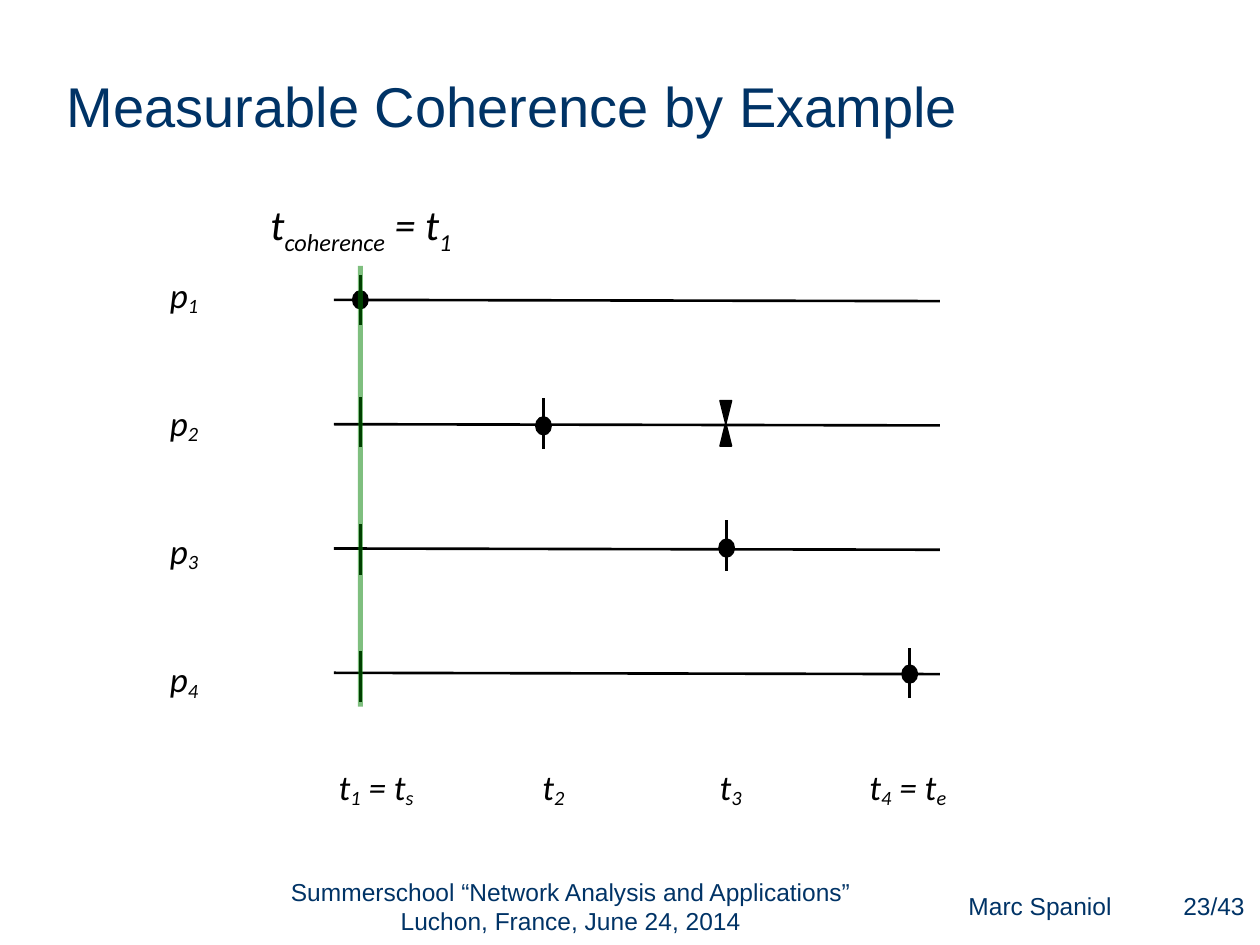
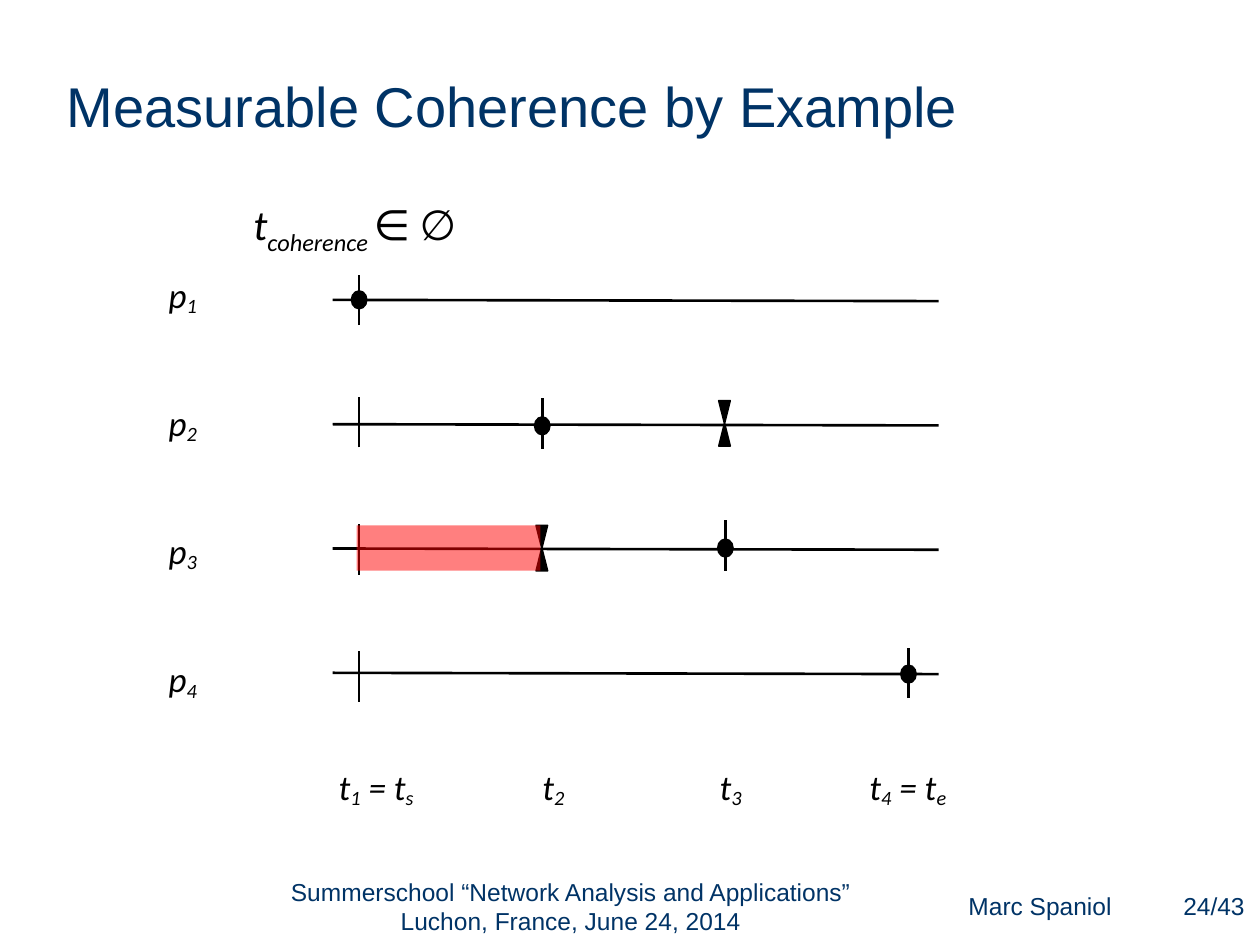
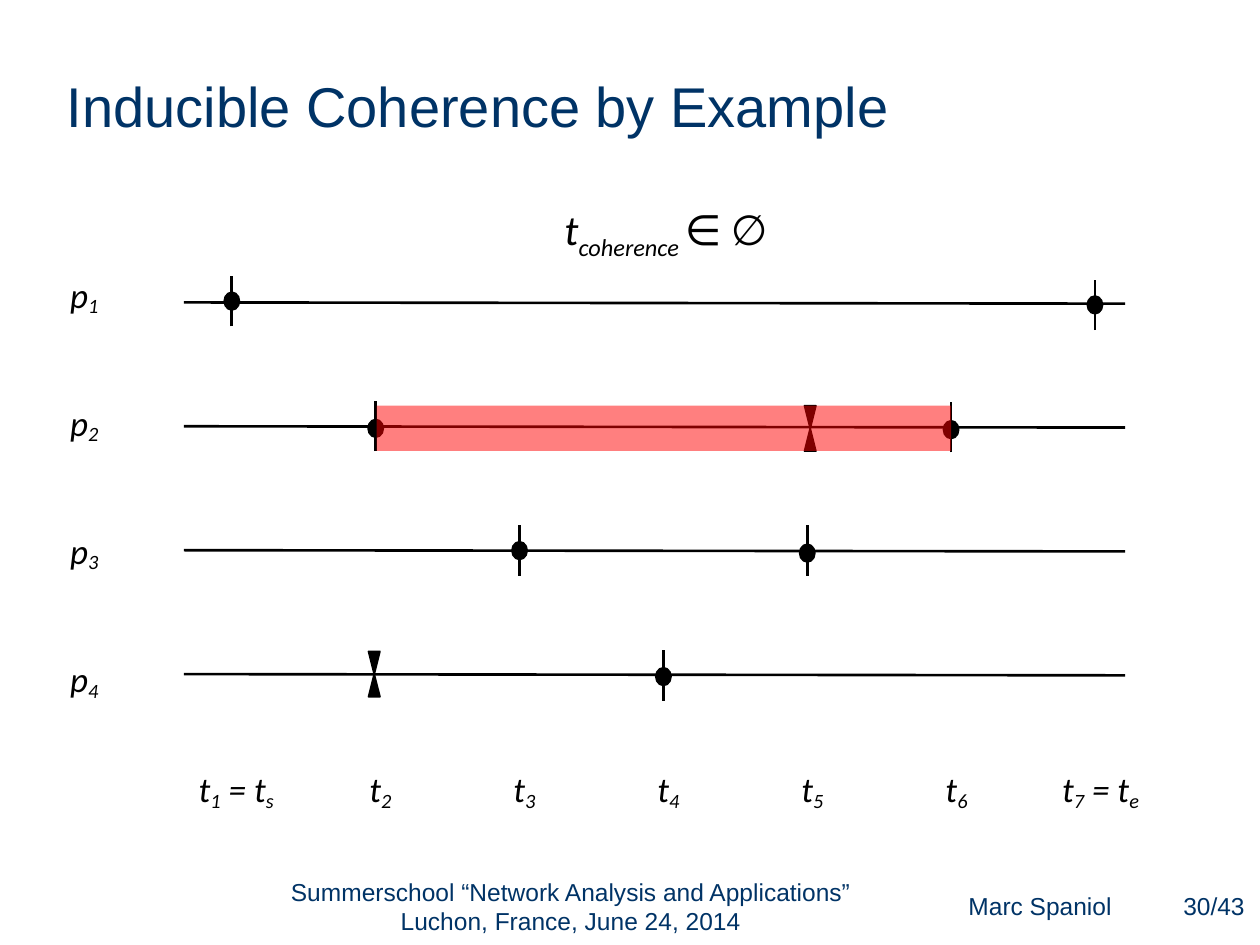
import dataclasses

import lxml.etree
import pptx
import pptx.dml.color
import pptx.enum.shapes
import pptx.enum.text
import pptx.oxml.ns
import pptx.util

Inches = pptx.util.Inches
Pt = pptx.util.Pt
SHAPE = pptx.enum.shapes.MSO_SHAPE
ALIGN = pptx.enum.text.PP_ALIGN
ANCHOR = pptx.enum.text.MSO_ANCHOR
qn = pptx.oxml.ns.qn

NAVY = "003366"
BLACK = "000000"
GREEN = "008000"
RED = "FF0000"
PAGE_COUNT = 43
AUTHOR = "Marc Spaniol"
EVENT = "Summerschool “Network Analysis and Applications” Luchon, France, June 24, 2014"
PAGES = ("p", "1"), ("p", "2"), ("p", "3"), ("p", "4")
EMPTY_COHERENCE = ("t", "coherence ", "∈ ∅")


@dataclasses.dataclass
class Timeline:
    page_label_left: float
    row_left: float
    row_right: float
    first_row: float
    last_row: float
    first_time: float
    last_time: float
    time_count: int
    first_label: float
    last_label: float
    label_top: float
    dots: tuple
    ticks: tuple
    hourglasses: tuple


MEASURABLE = Timeline(
    1.17, 2.65, 7.46, 2.38, 5.34, 2.86, 7.22, 4, 2.73, 6.95, 6.09,
    dots=((1, 2.38), (2, 3.38), (3, 4.35), (4, 5.35)),
    ticks=((1, 2.38), (1, 3.35), (1, 4.36), (1, 5.37), (2, 3.36), (3, 4.33), (4, 5.34)),
    hourglasses=((5.76, 3.36),),
)
VIOLATED = dataclasses.replace(
    MEASURABLE, page_label_left=1.16, row_left=2.64, row_right=7.45,
    first_time=2.85, last_time=7.21, hourglasses=((5.75, 3.36), (4.3, 4.35)),
)
INDUCIBLE = Timeline(
    0.38, 1.46, 8.93, 2.4, 5.35, 1.84, 8.69, 7, 1.62, 8.48, 6.11,
    dots=((1, 2.39), (2, 3.4), (3, 4.37), (4, 5.37), (5, 4.39), (6, 3.41), (7, 2.42)),
    ticks=((1, 2.39), (2, 3.38), (3, 4.37), (4, 5.36), (5, 4.37), (6, 3.39), (7, 2.42)),
    hourglasses=((6.43, 3.4), (2.97, 5.35)),
)


def color(value):
    return pptx.dml.color.RGBColor.from_string(value)


def spread(first, last, count):
    step = (last - first) / (count - 1)
    return [first + step * index for index in range(count)]


def place(left, top, width, height):
    return Inches(left), Inches(top), Inches(width), Inches(height)


def style_font(font, name, size, value, italic=False):
    font.name = name
    font.size = Pt(size)
    font.italic = italic
    font.color.rgb = color(value)


def add_title(page, text, width):
    title = page.shapes.title
    title.left, title.top, title.width, title.height = place(0.51, 0.52, width, 0.63)
    frame = title.text_frame
    frame.text = text
    frame.vertical_anchor = ANCHOR.MIDDLE
    frame.margin_left = frame.margin_right = Inches(0.02)
    para = frame.paragraphs[0]
    para.alignment = ALIGN.LEFT
    style_font(para.runs[0].font, "Arial", 32, NAVY)


def add_footer_text(page, text, *area):
    box = page.shapes.add_textbox(*place(*area))
    frame = box.text_frame
    frame.word_wrap = True
    frame.vertical_anchor = ANCHOR.MIDDLE
    frame.text = text
    para = frame.paragraphs[0]
    para.alignment = ALIGN.CENTER
    style_font(para.runs[0].font, "Arial", 14, NAVY)
    return frame


def add_footer(page, number):
    add_footer_text(page, AUTHOR, 7.42, 6.93, 1.67, 0.52)
    add_footer_text(page, EVENT, 2.09, 6.93, 4.88, 0.52)
    frame = add_footer_text(page, f"{number}/{PAGE_COUNT}", 9.34, 6.95, 0.61, 0.48)
    frame.margin_left = Inches(0.03)
    frame.margin_right = Inches(0.05)


def add_symbol(para, parts, size, subscript):
    para.alignment = ALIGN.CENTER
    for index, part in enumerate(parts):
        span = para.add_run()
        span.text = part
        style_font(span.font, "Calibri", size, BLACK, italic=True)
        if index % 2:
            span._r.get_or_add_rPr().set("baseline", str(-subscript * 1000))


def add_labels(page, labels, *area):
    box = page.shapes.add_textbox(*place(*area))
    frame = box.text_frame
    frame.word_wrap = False
    frame.vertical_anchor = ANCHOR.MIDDLE
    for index, parts in enumerate(labels):
        para = frame.add_paragraph() if index else frame.paragraphs[0]
        if index:
            para.space_before = Pt(48)
        add_symbol(para, parts, 20, 15)


def add_time_label(page, parts, left, top):
    overhang = 0.25 if len(parts) > 2 else 0
    add_labels(page, [parts], left - overhang, top, 0.51 + 2 * overhang, 0.32)


def add_coherence(page, parts, left, top):
    box = page.shapes.add_textbox(*place(left, top, 2.25, 0.5))
    box.text_frame.word_wrap = True
    add_symbol(box.text_frame.paragraphs[0], parts, 24, 25)


def add_line(page, x1, y1, x2, y2):
    line = page.shapes.add_connector(
        pptx.enum.shapes.MSO_CONNECTOR.STRAIGHT, Inches(x1), Inches(y1), Inches(x2), Inches(y2)
    )
    line.line.color.rgb = color(BLACK)
    line.line.width = Pt(1.5)
    lxml.etree.SubElement(line._element.spPr, qn("a:effectLst"))


def add_solid(shapes, kind, value, *area):
    shape = shapes.add_shape(kind, *place(*area))
    shape.shadow.inherit = False
    shape.fill.solid()
    shape.fill.fore_color.rgb = color(value)
    shape.line.color.rgb = color(value)
    shape.line.width = Pt(1)
    return shape


def add_hourglass(page, x, y):
    group = page.shapes.add_group_shape()
    left = x - 0.045
    add_solid(group.shapes, SHAPE.ISOSCELES_TRIANGLE, BLACK, left, y, 0.09, 0.18)
    upper = add_solid(group.shapes, SHAPE.ISOSCELES_TRIANGLE, BLACK, left, y - 0.18, 0.09, 0.18)
    upper.rotation = 180


def add_highlight(page, value, *area):
    band = add_solid(page.shapes, SHAPE.RECTANGLE, value, *area)
    band.line.fill.background()
    tint = band._element.spPr.find(qn("a:solidFill"))[0]
    lxml.etree.SubElement(tint, qn("a:alpha"), val="50000")


def time_label(number, count):
    if number == 1:
        return "t", "1", " = t", "s"
    if number == count:
        return "t", str(number), " = t", "e"
    return "t", str(number)


def add_timeline(page, timeline):
    count = timeline.time_count
    add_labels(page, PAGES, timeline.page_label_left, 1.98, 0.58, 3.78)
    label_lefts = spread(timeline.first_label, timeline.last_label, count)
    for number, left in enumerate(label_lefts, 1):
        add_time_label(page, time_label(number, count), left, timeline.label_top)
    for y in spread(timeline.first_row, timeline.last_row, len(PAGES)):
        add_line(page, timeline.row_left, y, timeline.row_right, y + 0.01)
    times = spread(timeline.first_time, timeline.last_time, count)
    for number, y in timeline.dots:
        add_solid(page.shapes, SHAPE.OVAL, BLACK, times[number - 1] - 0.06, y - 0.07, 0.12, 0.14)
    for x, y in timeline.hourglasses:
        add_hourglass(page, x, y)
    for number, y in timeline.ticks:
        x = times[number - 1]
        add_line(page, x, y + 0.2, x, y - 0.2)


def add_example(deck, title, title_width, number, timeline, coherence, coherence_at, highlight):
    page = deck.slides.add_slide(deck.slide_layouts[5])
    add_title(page, title, title_width)
    add_timeline(page, timeline)
    add_coherence(page, coherence, *coherence_at)
    add_highlight(page, *highlight)
    add_footer(page, number)


def main():
    deck = pptx.Presentation()
    deck.slide_width = Inches(10)
    deck.slide_height = Inches(7.5)
    add_example(
        deck, "Measurable Coherence by Example", 9.06, 23, MEASURABLE,
        ("t", "coherence", " = t", "1"), (1.74, 1.53), (GREEN, 2.84, 2.11, 0.04, 3.5),
    )
    add_example(
        deck, "Measurable Coherence by Example", 8.98, 24, VIOLATED,
        EMPTY_COHERENCE, (1.69, 1.53), (RED, 2.83, 4.17, 1.46, 0.36),
    )
    add_example(
        deck, "Inducible Coherence by Example", 7.01, 30, INDUCIBLE,
        EMPTY_COHERENCE, (4.16, 1.57), (RED, 2.99, 3.22, 4.56, 0.36),
    )
    deck.save("out.pptx")


if __name__ == "__main__":
    main()
